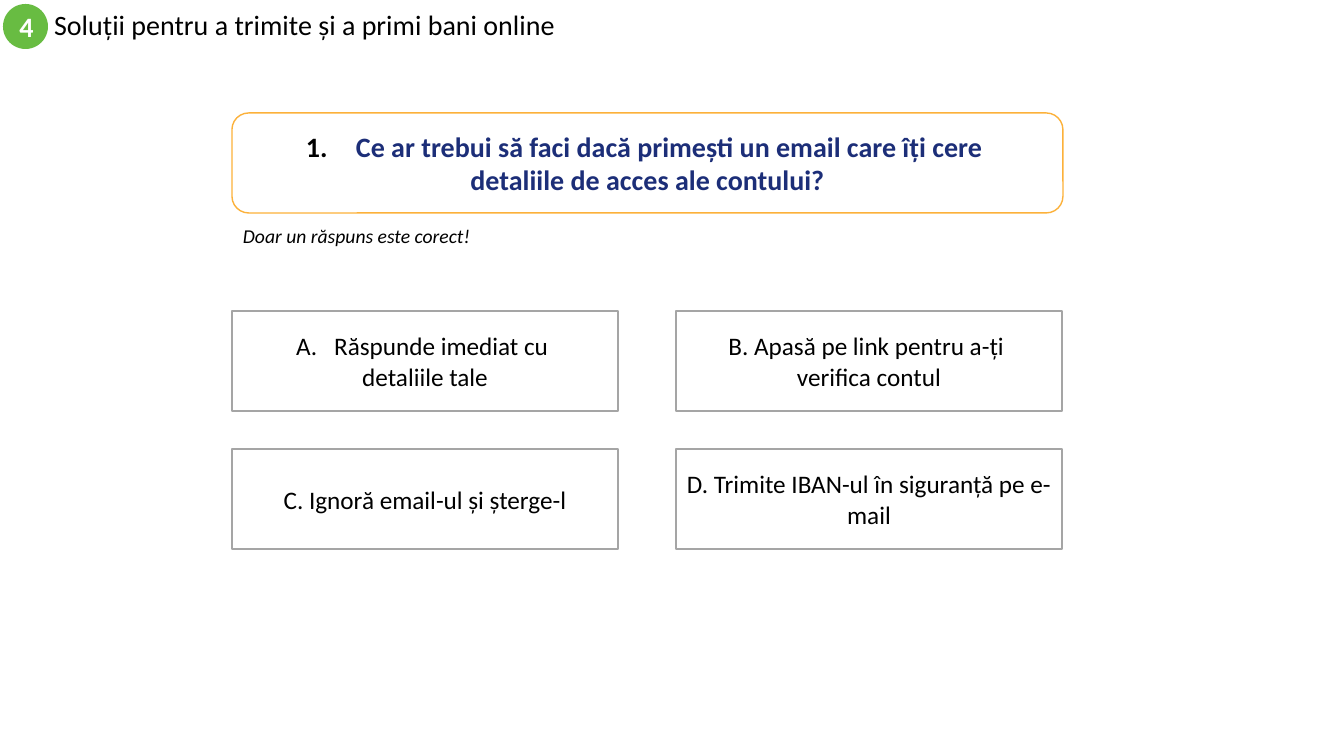
import pptx
import pptx.util
import pptx.dml.color
import pptx.enum.shapes
import pptx.enum.text
import lxml.etree

PX = 9525 * 96 / 100.8
KIND = pptx.enum.shapes.MSO_SHAPE
ALIGN = pptx.enum.text.PP_ALIGN
ANCHOR = pptx.enum.text.MSO_ANCHOR


def rgb(code):
    return pptx.dml.color.RGBColor.from_string(code)


def write(shape, text, size=18, color="000000", bold=False, italic=False,
          align=ALIGN.CENTER, anchor=ANCHOR.MIDDLE, space=None, wrap=True,
          number=None, indent=0):
    """Fill a shape with lines of text; number is the list style of the first."""
    frame = shape.text_frame
    frame.word_wrap = wrap
    frame.vertical_anchor = anchor
    frame.text = text
    for i, para in enumerate(frame.paragraphs):
        para.alignment = align
        if space:
            para.line_spacing = space
        if number and i == 0:
            props = para._p.get_or_add_pPr()
            props.set("marL", str(round(indent * PX)))
            props.set("indent", str(round(-indent * PX)))
            tint = lxml.etree.SubElement(props, pptx.oxml.ns.qn("a:buClr"))
            lxml.etree.SubElement(tint, pptx.oxml.ns.qn("a:srgbClr"), val="000000")
            lxml.etree.SubElement(props, pptx.oxml.ns.qn("a:buFont"), typeface="+mj-lt")
            lxml.etree.SubElement(props, pptx.oxml.ns.qn("a:buAutoNum"), type=number)
        for run in para.runs:
            font = run.font
            font.name = "Calibri"
            font.size = pptx.util.Pt(size)
            font.bold = bold
            font.italic = italic
            font.color.rgb = rgb(color)


def draw(kind, box, fill, line=None, width=1):
    shape = slide.shapes.add_shape(kind, *[round(n * PX) for n in box])
    shape.shadow.inherit = False
    shape.fill.solid()
    shape.fill.fore_color.rgb = rgb(fill)
    if line:
        shape.line.color.rgb = rgb(line)
        shape.line.width = pptx.util.Pt(width)
    else:
        shape.line.fill.background()
    return shape


deck = pptx.Presentation()
deck.slide_width = round(1344 * PX)
deck.slide_height = round(756 * PX)
slide = deck.slides.add_slide(deck.slide_layouts[5])

# Header
badge = draw(KIND.OVAL, (3, 4, 45, 45), "68BC42")
write(badge, "4", size=20, color="FFFFFF", bold=True)
title = slide.shapes.title
title.left, title.top, title.width, title.height = [
    round(n * PX) for n in (44, 4, 806, 45)]
write(title, "Soluții pentru a trimite și a primi bani online",
      size=20, align=ALIGN.LEFT, space=0.9)

# Question
ask = draw(KIND.ROUNDED_RECTANGLE, (232, 113, 831, 100), "FFFFFF", "FCB13A")
write(ask, "Ce ar trebui să faci dacă primești un email care îți cere \n"
      "detaliile de acces ale contului?",
      size=20, color="1C2E78", bold=True, number="arabicPeriod", indent=50)
hint = slide.shapes.add_textbox(*[round(n * PX) for n in (233, 219, 286, 34)])
write(hint, "Doar un răspuns este corect!", size=14, italic=True,
      align=ALIGN.LEFT, anchor=ANCHOR.TOP, wrap=False)

# Answers, two by two
answers = [
    ("Răspunde imediat cu \ndetaliile tale", "alphaUcPeriod"),
    ("B. Apasă pe link pentru a-ți \nverifica contul", None),
    ("C. Ignoră email-ul și șterge-l", None),
    ("D. Trimite IBAN-ul în siguranță pe e-mail", None),
]
for i, (text, number) in enumerate(answers):
    row, col = divmod(i, 2)
    card = draw(KIND.RECTANGLE, (232 + 444 * col, 311 + 138 * row, 386, 100),
                "FFFFFF", "A5A5A5", 2)
    write(card, text, number=number, indent=38)

deck.save("out.pptx")
